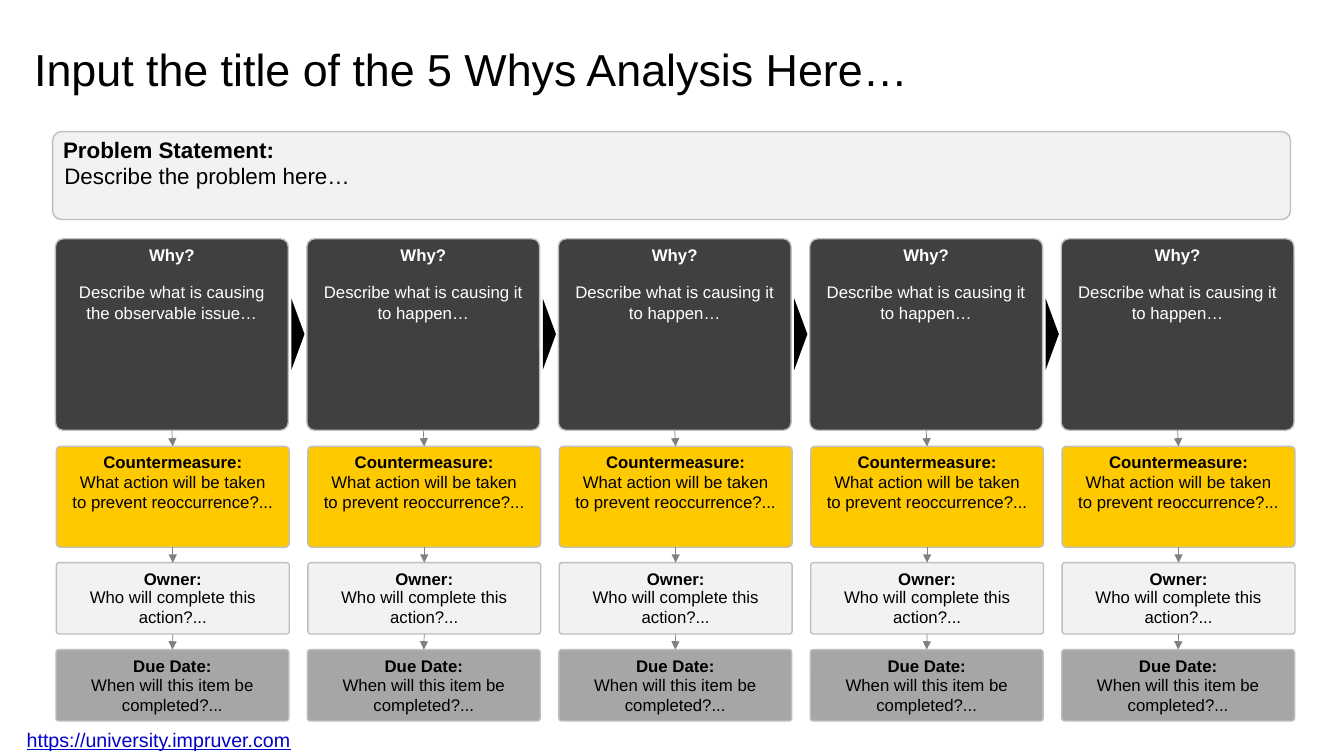
import pptx
import pptx.util
import pptx.dml.color
import pptx.enum.shapes
import pptx.enum.text
import pptx.oxml
import pptx.oxml.ns

Pt = pptx.util.Pt
RGB = pptx.dml.color.RGBColor.from_string
SHAPE = pptx.enum.shapes.MSO_SHAPE
ALIGN = pptx.enum.text.PP_ALIGN

COLORS = {
    "black": "000000",
    "white": "FFFFFF",
    "dark": "404040",
    "yellow": "FFC900",
    "light": "F2F2F2",
    "mid": "A6A6A6",
    "border": "BFBFBF",
    "arrow": "808080",
    "link": "0000CC",
}


def add_text(text, x, y, w, h, size, color="black", bold=False, align=ALIGN.LEFT):
    """Add a one-paragraph text box and return its paragraph."""
    tf = s.shapes.add_textbox(Pt(x), Pt(y), Pt(w), Pt(h)).text_frame
    tf.word_wrap = True
    p = tf.paragraphs[0]
    p.text = text
    p.alignment = align
    p.font.name = "Arial"
    p.font.size = Pt(size)
    p.font.bold = bold
    p.font.color.rgb = RGB(COLORS[color])
    return p


def add_card(x, y, w, h, fill, corner):
    sp = s.shapes.add_shape(SHAPE.ROUNDED_RECTANGLE, Pt(x), Pt(y), Pt(w), Pt(h))
    sp.adjustments[0] = corner
    sp.shadow.inherit = False
    sp.fill.solid()
    sp.fill.fore_color.rgb = RGB(COLORS[fill])
    sp.line.color.rgb = RGB(COLORS["border"])
    sp.line.width = Pt(1)


prs = pptx.Presentation()
prs.slide_width, prs.slide_height = Pt(960), Pt(540)
s = prs.slides.add_slide(prs.slide_layouts[6])

# Heading, problem statement and footer address
address = add_text("https://university.impruver.com", 12, 516.2, 492.5, 24.2, 14, "link")
address.font.underline = True
title = add_text("Input the title of the 5 Whys Analysis Here…", 17.3, 28.8, 922.3, 45.4, 32)
title.line_spacing = 0.9
s.shapes[-1].text_frame.vertical_anchor = pptx.enum.text.MSO_ANCHOR.MIDDLE

add_card(37.6, 94, 884.2, 62.8, "light", 0.1)
add_text("Problem Statement:", 38, 93.8, 260.6, 26.6, 16, bold=True)
add_text("Describe the problem here…", 38.9, 112.5, 866.2, 26.6, 16)

# Five columns of four stacked cards
COLUMNS = 5
PITCH = 179.6
CARD_W = 166.3
TEXT_W = 158.6
FIRST_CAUSE = "Describe what is causing the observable issue…"
# left, top, height, fill, text colour, heading, body, body offset from card top
ROWS = [
    (39.6, 170.6, 136.8, "dark", "white", "Why?",
     "Describe what is causing it to happen…", 27.4),
    (40.3, 318.9, 72, "yellow", "black", "Countermeasure:",
     "What action will be taken to prevent reoccurrence?...", 14.2),
    (40.3, 401.9, 51, "light", "black", "Owner:",
     "Who will complete this action?...", 13.7),
    (40, 464, 51, "mid", "black", "Due Date:",
     "When will this item be completed?...", 14.1),
]

for col in range(COLUMNS):
    for row, (left, top, height, fill, color, heading, body, drop) in enumerate(ROWS):
        x = left + col * PITCH
        text_x = x + (CARD_W - TEXT_W) / 2
        if row == 0 and col == 0:
            body = FIRST_CAUSE
        add_card(x, top, CARD_W, height, fill, 0.04)
        add_text(heading, text_x, top + 0.5, TEXT_W, 21.6, 12, color, True, ALIGN.CENTER)
        add_text(body, text_x, top + drop, TEXT_W, 36, 12, color, align=ALIGN.CENTER)

    # Arrows from each card down to the next
    for upper, lower in zip(ROWS, ROWS[1:]):
        middle = col * PITCH + CARD_W / 2
        line = s.shapes.add_connector(
            pptx.enum.shapes.MSO_CONNECTOR.STRAIGHT,
            Pt(upper[0] + middle), Pt(upper[1] + upper[2]),
            Pt(lower[0] + middle), Pt(lower[1]))
        line.line.color.rgb = RGB(COLORS["arrow"])
        line.line.width = Pt(0.5)
        tail = pptx.oxml.parse_xml(
            f'<a:tailEnd {pptx.oxml.ns.nsdecls("a")} type="triangle"/>')
        line.line._get_or_add_ln().append(tail)
        line._element.spPr.append(
            pptx.oxml.parse_xml(f'<a:effectLst {pptx.oxml.ns.nsdecls("a")}/>'))

# Triangles pointing from one why to the next
for gap in range(COLUMNS - 1):
    sp = s.shapes.add_shape(SHAPE.ISOSCELES_TRIANGLE, Pt(187.3 + gap * PITCH), Pt(234),
                            Pt(51), Pt(9.4))
    sp.rotation = 90
    sp.shadow.inherit = False
    sp.fill.solid()
    sp.fill.fore_color.rgb = RGB(COLORS["black"])
    sp.line.fill.background()

prs.save("out.pptx")
